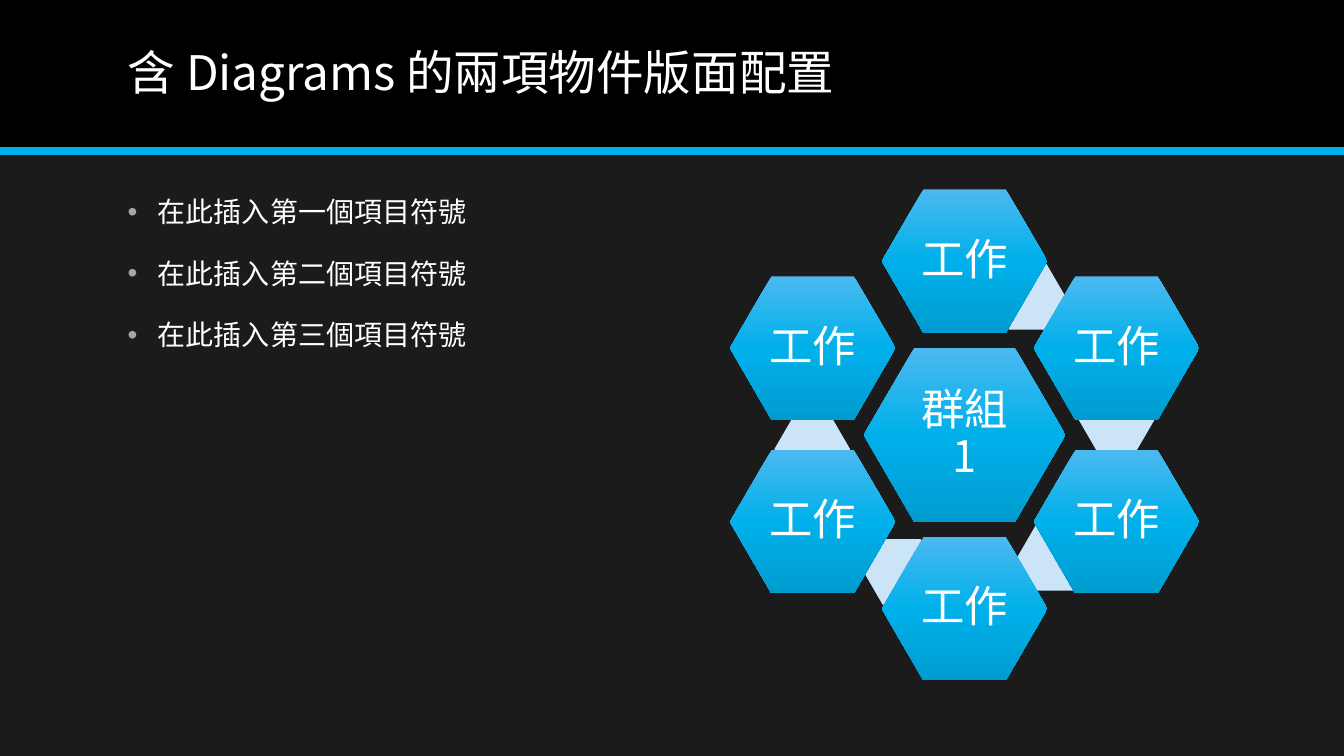
from copy import deepcopy
from dataclasses import dataclass
from math import cos, radians, sin

from lxml.etree import SubElement as Sub
from pptx import Presentation
from pptx.dml.color import RGBColor as Rgb
from pptx.enum.shapes import MSO_CONNECTOR as Line, MSO_SHAPE as Kind
from pptx.enum.text import MSO_ANCHOR as Anchor, MSO_AUTO_SIZE as Fit, PP_ALIGN as Align
from pptx.oxml.ns import qn
from pptx.util import Cm, Pt


@dataclass(frozen=True)
class Theme:
    font: str = "Noto Sans CJK TC"
    back: str = "1B1B1B"
    band: str = "000000"
    rule: str = "00B0EA"
    text: str = "FFFFFF"
    dot: str = "A6A6A6"
    link: str = "CCE4F7"
    fade: tuple = ("4BB9F0", "00B0EA", "009CD0")
    head: int = 34
    body: int = 20
    cell: int = 31


theme = Theme()


def add_run(para, text, size):
    run = para.add_run()
    run.text = text
    run.font.size = Pt(size)
    run.font.name = theme.font
    run.font.color.rgb = Rgb.from_string(theme.text)
    Sub(run.font._element, qn("a:ea"), typeface=theme.font)


def add_hex(x, y, wide, high, text="", pad=0.1):
    """Draw a hexagon centred at x, y: a faded one with text, a plain one without."""
    cell = slide.shapes.add_shape(
        Kind.HEXAGON, Cm(x - wide / 2), Cm(y - high / 2), Cm(wide), Cm(high))
    cell.adjustments[0] = 0.29
    cell.shadow.inherit = False
    cell.line.fill.background()
    if not text:
        cell.fill.solid()
        cell.fill.fore_color.rgb = Rgb.from_string(theme.link)
        return
    cell.fill.gradient()
    cell.fill.gradient_angle = 270
    first, last = cell.fill.gradient_stops
    first._element.addnext(deepcopy(first._element))
    for stop, hue, place in zip(cell.fill.gradient_stops, theme.fade, (0, 0.5, 1)):
        stop.color.rgb = Rgb.from_string(hue)
        stop.position = place
    frame = cell.text_frame
    frame.word_wrap = True
    frame.vertical_anchor = Anchor.MIDDLE
    frame.margin_left = frame.margin_right = Cm(pad)
    frame.margin_top = frame.margin_bottom = Cm(0.1)
    para = frame.paragraphs[0]
    para.alignment = Align.CENTER
    para.line_spacing = 0.9
    add_run(para, text, theme.cell)


# Slide and background
deck = Presentation()
deck.slide_width, deck.slide_height = Cm(33.87), Cm(19.05)
slide = deck.slides.add_slide(deck.slide_layouts[5])
slide.background.fill.solid()
slide.background.fill.fore_color.rgb = Rgb.from_string(theme.back)

# Title band with its rule
title = slide.shapes.title
band = slide.shapes.add_shape(Kind.RECTANGLE, 0, 0, deck.slide_width, Cm(3.81))
band.shadow.inherit = False
band.fill.solid()
band.fill.fore_color.rgb = Rgb.from_string(theme.band)
band.line.fill.background()
rule = slide.shapes.add_connector(
    Line.STRAIGHT, 0, Cm(3.81), deck.slide_width, Cm(3.81))
rule.line.color.rgb = Rgb.from_string(theme.rule)
rule.line.width = Pt(6)
Sub(rule.element.spPr, qn("a:effectLst"))
for part in (band, rule):
    title.element.addprevious(part.element)

# Title
title.left, title.top, title.width, title.height = Cm(2.97), Cm(0.36), Cm(27.94), Cm(3.05)
title.text_frame.auto_size = Fit.NONE
title.text_frame.vertical_anchor = Anchor.MIDDLE
para = title.text_frame.paragraphs[0]
para.alignment = Align.LEFT
para.line_spacing = 0.9
add_run(para, "含 Diagrams 的兩項物件版面配置", theme.head)

# Bullet list
frame = slide.shapes.add_textbox(Cm(2.97), Cm(4.78), Cm(13.21), Cm(12.4)).text_frame
frame.word_wrap = True
for i, rank in enumerate("一二三"):
    para = frame.paragraphs[0] if i == 0 else frame.add_paragraph()
    para.space_before = Pt(20 if i else 0)
    props = para._p.get_or_add_pPr()
    props.set("marL", str(Cm(0.76)))
    props.set("indent", str(Cm(-0.76)))
    Sub(Sub(props, qn("a:buClr")), qn("a:srgbClr"), val=theme.dot)
    Sub(props, qn("a:buFont"), typeface="Arial")
    Sub(props, qn("a:buChar"), char="•")
    add_run(para, f"在此插入第{rank}個項目符號", theme.body)

# Hexagon ring: links behind, then the group and its six tasks
mid_x, mid_y = 24.31, 10.96
links = [(1.59, -3.48), (3.83, -0.38), (2.27, 3.1), (-1.59, 3.45), (-3.84, 0.36)]
for dx, dy in links:
    add_hex(mid_x + dx, mid_y + dy, 1.91, 1.65)
add_hex(mid_x, mid_y, 5.08, 4.39, "群組 1", pad=0.3)
for turn in range(0, 360, 60):
    angle = radians(turn)
    add_hex(mid_x + 4.42 * sin(angle), mid_y - 4.38 * cos(angle), 4.17, 3.61, "工作")

deck.save("out.pptx")
